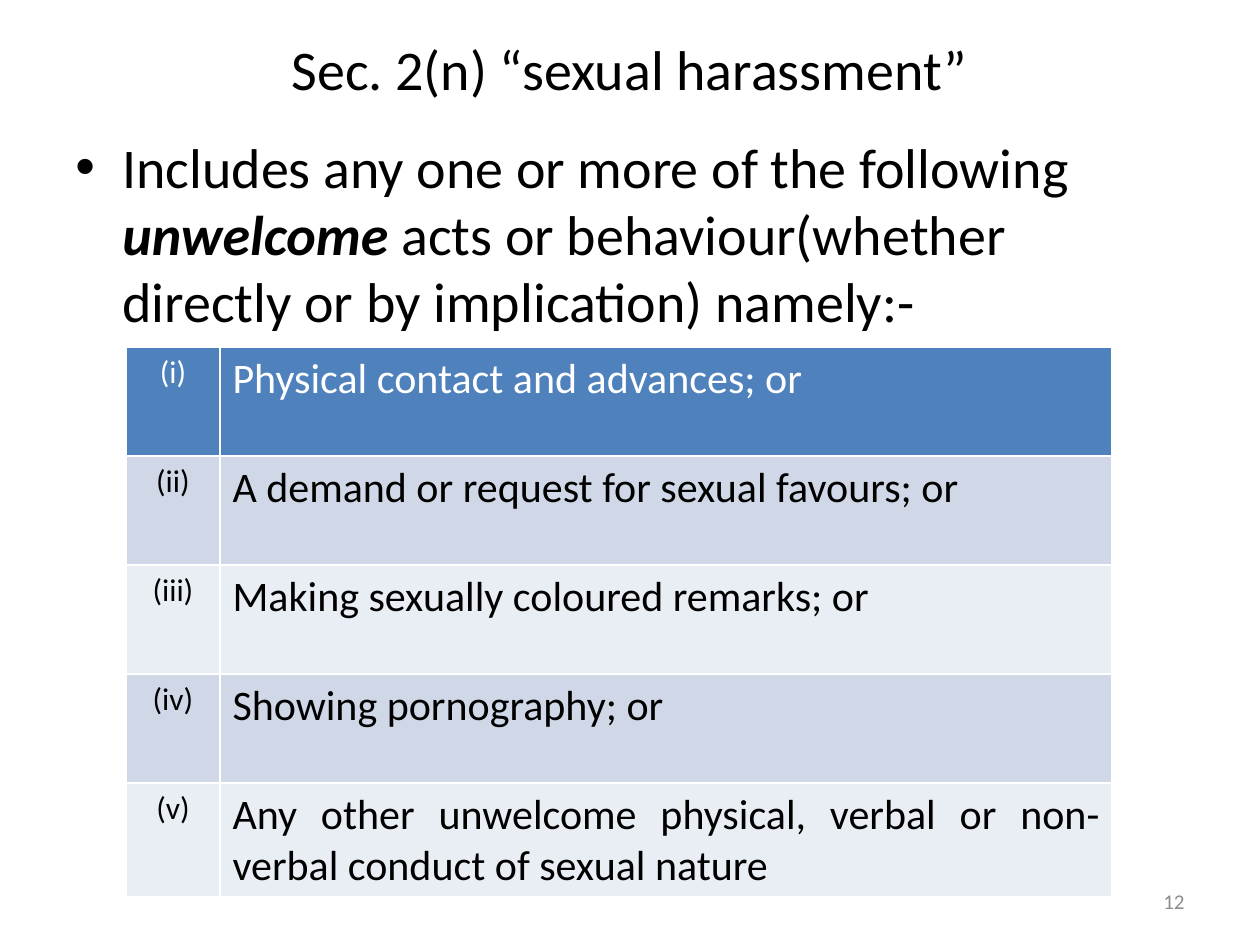
from lxml.etree import SubElement
from pptx import Presentation
from pptx.dml.color import RGBColor
from pptx.enum.text import MSO_ANCHOR, PP_ALIGN
from pptx.oxml.ns import qn
from pptx.util import Pt

PX = 914400 / 126
COLORS = {
    "text": "000000",
    "header_text": "FFFFFF",
    "header": "4F81BD",
    "band_dark": "D0D8E8",
    "band_light": "E9EDF4",
    "number": "8C8C8C",
}


def px(*lengths):
    return [round(length * PX) for length in lengths]


def add_run(paragraph, text, color="text", **font_format):
    run = paragraph.add_run()
    run.text = text
    run.font.color.rgb = RGBColor.from_string(COLORS[color])
    for attribute, value in {"name": "Calibri", **font_format}.items():
        setattr(run.font, attribute, value)


prs = Presentation()
prs.slide_width, prs.slide_height = px(1260, 945)
slide = prs.slides.add_slide(prs.slide_layouts[5])

# Title
title = slide.shapes.title
title.left, title.top, title.width, title.height = px(63, 0, 1134, 136)
title.text_frame.vertical_anchor = MSO_ANCHOR.MIDDLE
heading = title.text_frame.paragraphs[0]
heading.alignment = PP_ALIGN.CENTER
add_run(heading, "Sec. 2(n) “sexual harassment”", size=Pt(32))

# Definition with its bullet
definition = slide.shapes.add_textbox(*px(63, 126, 1134, 718)).text_frame
definition.word_wrap = True
intro = definition.paragraphs[0]
intro.space_before = Pt(6.4)
indent, = px(47)
bullet_format = intro._p.get_or_add_pPr()
bullet_format.set("marL", str(indent))
bullet_format.set("indent", str(-indent))
SubElement(bullet_format, qn("a:buFont"), typeface="Arial")
SubElement(bullet_format, qn("a:buChar"), char="•")
for words, emphasis in [
    ("Includes any one or more of the following ", False),
    ("unwelcome", True),
    (" acts or behaviour(whether directly or by implication) namely:-", False),
]:
    add_run(intro, words, size=Pt(32), bold=emphasis, italic=emphasis)

# Table of acts
acts = [
    ("(i)", "Physical contact and advances; or"),
    ("(ii)", "A demand or request for sexual favours; or"),
    ("(iii)", "Making sexually coloured remarks; or"),
    ("(iv)", "Showing pornography; or"),
    ("(v)", "Any other unwelcome physical, verbal or non-verbal conduct of sexual nature"),
]
column_formats = [(94, 18, PP_ALIGN.CENTER), (892, 24, PP_ALIGN.JUSTIFY)]
acts_table = slide.shapes.add_table(len(acts), 2, *px(126, 347, 986, 550)).table
for column, (width, _, _) in zip(acts_table.columns, column_formats):
    column.width, = px(width)
for row, act in enumerate(acts):
    acts_table.rows[row].height, = px(109)
    band = "header" if row == 0 else ("band_light", "band_dark")[row % 2]
    text_color = "header_text" if row == 0 else "text"
    for col, (_, size, alignment) in enumerate(column_formats):
        cell = acts_table.cell(row, col)
        cell.fill.solid()
        cell.fill.fore_color.rgb = RGBColor.from_string(COLORS[band])
        entry = cell.text_frame.paragraphs[0]
        entry.alignment = alignment
        add_run(entry, act[col], text_color, size=Pt(size), bold=False)

# Slide number
page = slide.shapes.add_textbox(*px(903, 876, 294, 50)).text_frame
page.word_wrap = True
page.vertical_anchor = MSO_ANCHOR.MIDDLE
page.paragraphs[0].alignment = PP_ALIGN.RIGHT
add_run(page.paragraphs[0], "12", "number", size=Pt(12))

prs.save("out.pptx")
